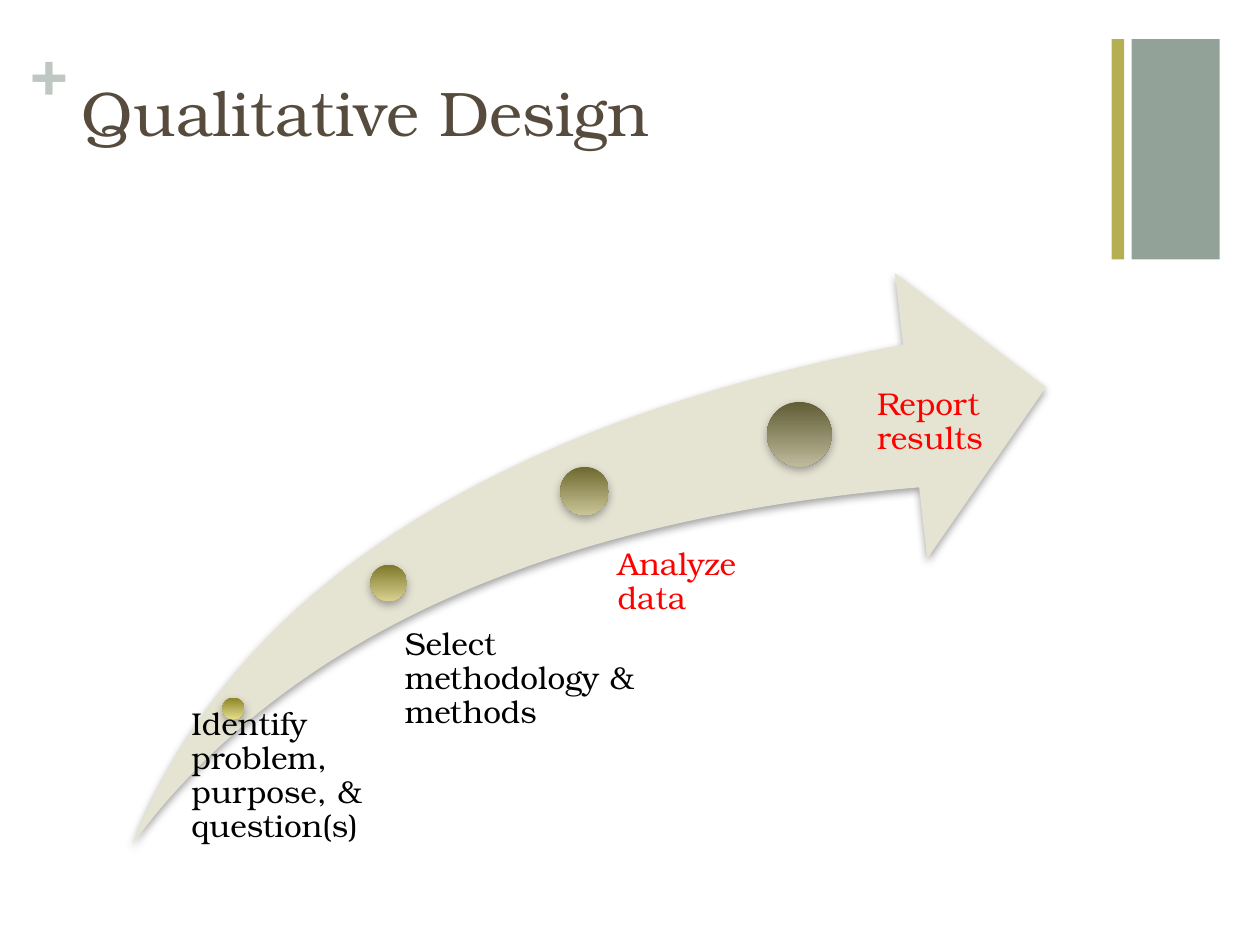
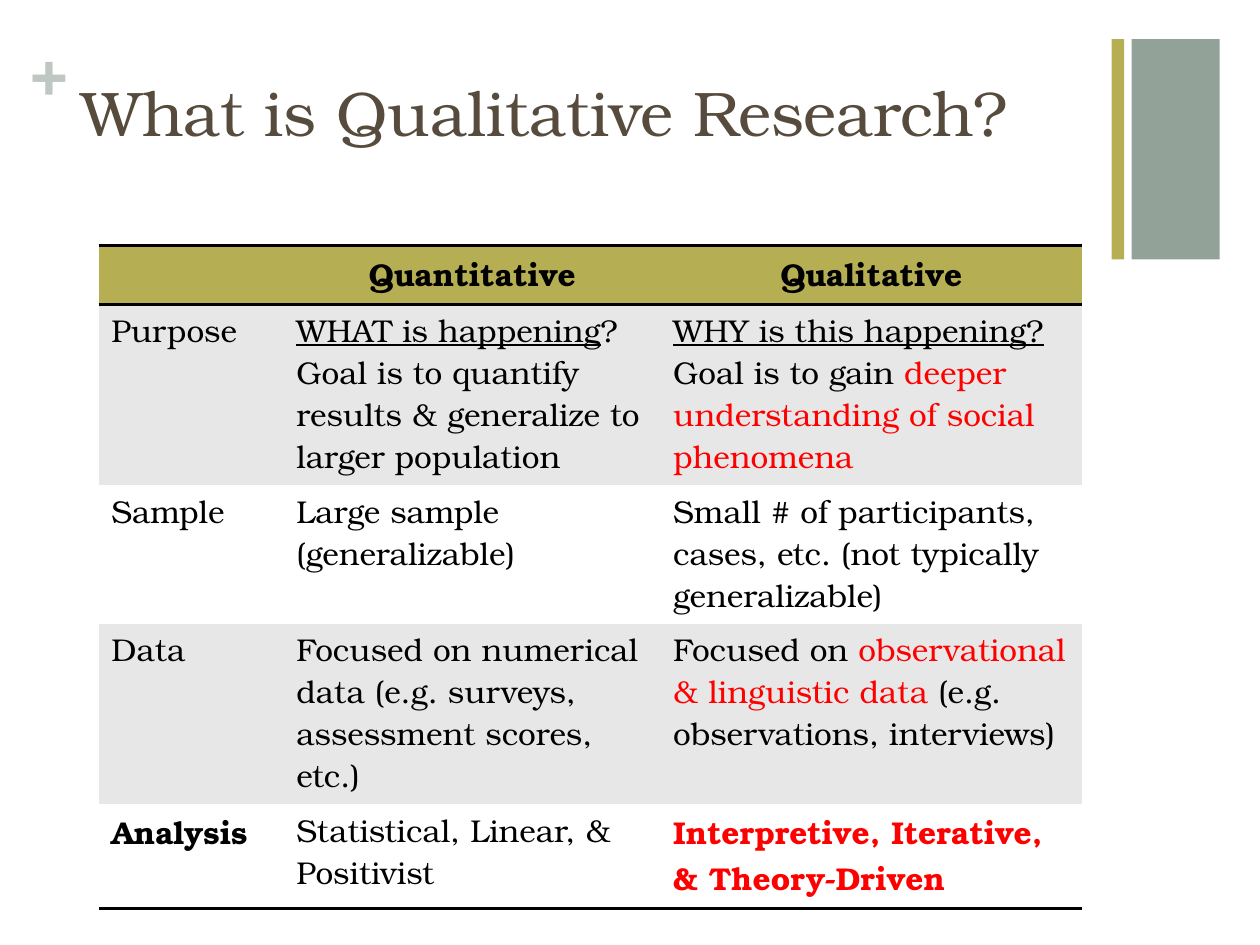
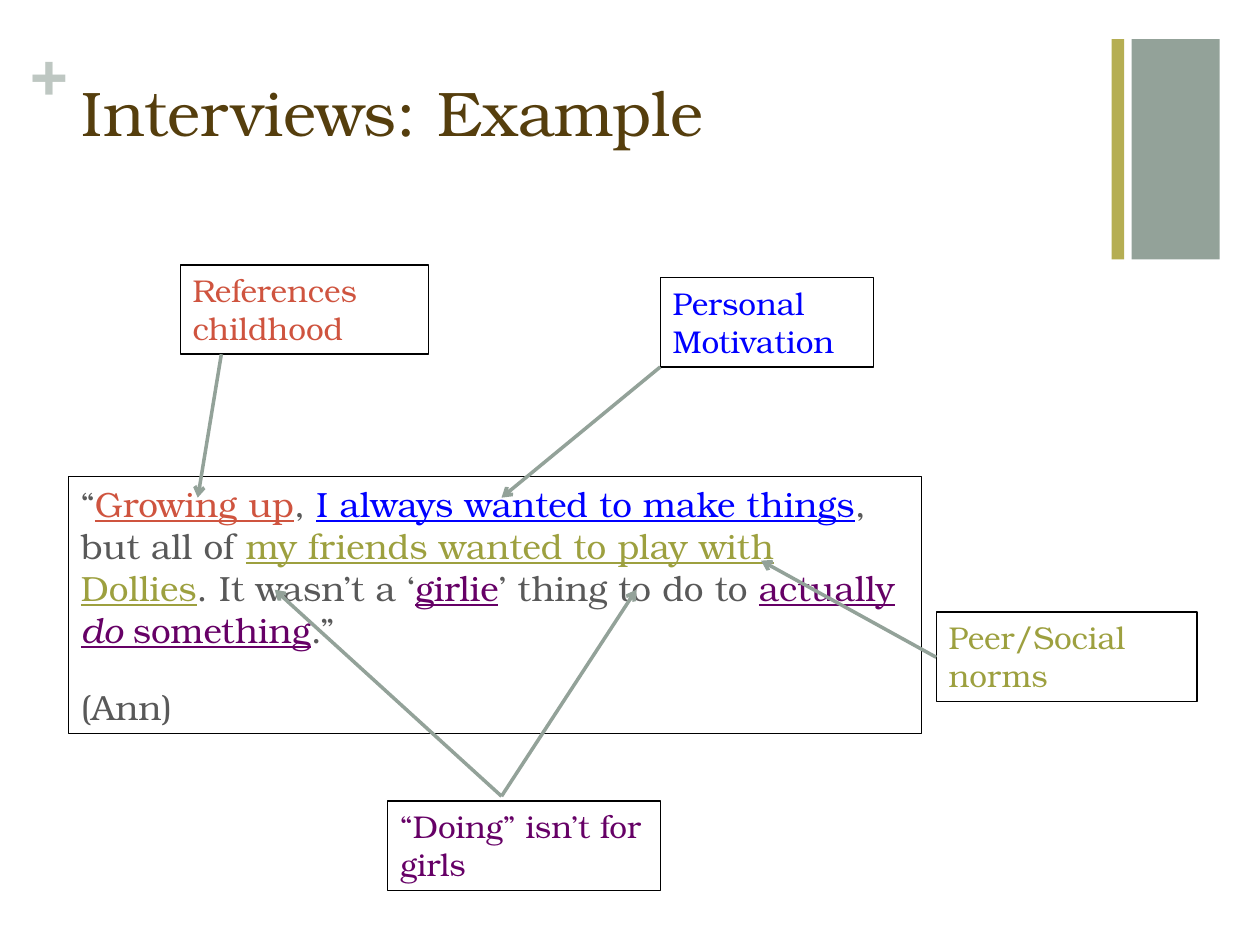
from dataclasses import dataclass
from typing import NamedTuple, Optional

import pptx
import pptx.dml.color
import pptx.enum.shapes
import pptx.enum.text
import pptx.oxml
import pptx.oxml.ns
import pptx.util
from lxml import etree

Pt = pptx.util.Pt
Shapes = pptx.enum.shapes.MSO_SHAPE
Align = pptx.enum.text.PP_ALIGN
qn = pptx.oxml.ns.qn


# Theme
@dataclass(frozen=True)
class Theme:
    font: str = "TeX Gyre Bonum"
    title_size: float = 36
    quote_size: float = 20
    text_size: float = 18
    title: str = "564B3C"
    title_dark: str = "553E0D"
    sage: str = "93A299"
    pale_sage: str = "BEC7C2"
    olive: str = "B5AE53"
    swoosh: str = "E5E3D1"
    black: str = "000000"
    white: str = "FFFFFF"
    grey: str = "595959"
    band: str = "E7E7E7"
    red: str = "FF0000"
    shadow: str = "808080"
    childhood: str = "CF543F"
    motivation: str = "0000FF"
    norms: str = "9DA03F"
    doing: str = "660066"


THEME = Theme()
NO_STYLE_TABLE = "{2D5ABB26-0587-4C30-8999-92F81FD0307C}"


# Building blocks
class Frame(NamedTuple):
    left: float
    top: float
    width: float
    height: float

    def lengths(self) -> list:
        return [Pt(value) for value in self]


class Insets(NamedTuple):
    left: float = 7.2
    top: float = 3.6
    right: float = 7.2
    bottom: float = 3.6


class Span(NamedTuple):
    text: str
    color: Optional[str] = None
    underline: bool = False
    italic: bool = False


@dataclass(frozen=True)
class TextStyle:
    size: float = THEME.text_size
    color: str = THEME.black
    bold: bool = False
    align: Align = Align.LEFT
    line_spacing: object = 1.0
    space_before: float = 0


class Milestone(NamedTuple):
    text: str
    color: str
    dot: Frame
    gradient: tuple
    label: Frame
    inset: float


class Callout(NamedTuple):
    text: str
    color: str
    frame: Frame


class Arrow(NamedTuple):
    start: tuple
    end: tuple


class Row(NamedTuple):
    height: float
    fill: str
    cells: tuple
    bold_columns: tuple = ()
    align: Align = Align.LEFT
    rule_above: bool = False
    rule_below: bool = False


def rgb(color: str) -> pptx.dml.color.RGBColor:
    return pptx.dml.color.RGBColor.from_string(color)


def write_text(frame, paras: list, style: TextStyle) -> None:
    """Write paragraphs, each a list of spans, into a text frame."""
    frame.word_wrap = True
    for index, spans in enumerate(paras):
        para = frame.add_paragraph() if index else frame.paragraphs[0]
        para.alignment = style.align
        para.line_spacing = style.line_spacing
        para.space_before = Pt(style.space_before)
        para.font.name = THEME.font
        para.font.size = Pt(style.size)
        para.font.bold = style.bold
        para.font.color.rgb = rgb(style.color)
        for span in spans:
            run = para.add_run()
            run.text = span.text
            if span.color:
                run.font.color.rgb = rgb(span.color)
            if span.underline:
                run.font.underline = True
            if span.italic:
                run.font.italic = True


def set_insets(target, insets: Insets) -> None:
    target.margin_left, target.margin_top = Pt(insets.left), Pt(insets.top)
    target.margin_right, target.margin_bottom = Pt(insets.right), Pt(insets.bottom)


def add_text(page, frame: Frame, paras: list, style: TextStyle,
             insets: Insets = Insets(), outlined: bool = False) -> None:
    box = page.shapes.add_textbox(*frame.lengths())
    set_insets(box.text_frame, insets)
    if outlined:
        box.line.color.rgb = rgb(THEME.black)
        box.line.width = Pt(0.75)
    write_text(box.text_frame, paras, style)


def add_figure(page, kind: Shapes, frame: Frame, color: Optional[str] = None):
    figure = page.shapes.add_shape(kind, *frame.lengths())
    figure.shadow.inherit = False
    figure.line.fill.background()
    if color:
        figure.fill.solid()
        figure.fill.fore_color.rgb = rgb(color)
    return figure


def add_soft_shadow(figure) -> None:
    effects = figure._element.spPr.find(qn("a:effectLst"))
    shadow = etree.SubElement(effects, qn("a:outerShdw"), blurRad=str(Pt(5)),
                              dist=str(Pt(2)), dir="5400000", rotWithShape="0")
    color = etree.SubElement(shadow, qn("a:srgbClr"), val=THEME.shadow)
    etree.SubElement(color, qn("a:alpha"), val="75000")


def add_arrow(page, arrow: Arrow) -> None:
    ends = [Pt(value) for value in arrow.start + arrow.end]
    line = page.shapes.add_connector(pptx.enum.shapes.MSO_CONNECTOR.STRAIGHT, *ends)
    line.line.color.rgb = rgb(THEME.sage)
    line.line.width = Pt(2)
    properties = line._element.spPr
    etree.SubElement(properties.find(qn("a:ln")), qn("a:tailEnd"), type="arrow")
    etree.SubElement(properties, qn("a:effectLst"))


def rule_cell(cell, side: str) -> None:
    """Draw a black rule on one side of a cell, ahead of its fill."""
    properties = cell._tc.get_or_add_tcPr()
    line = etree.Element(qn(f"a:{side}"), w=str(Pt(2)))
    fill = etree.SubElement(line, qn("a:solidFill"))
    etree.SubElement(fill, qn("a:srgbClr"), val=THEME.black)
    properties.insert(len(properties.findall(qn("a:lnT"))), line)


def add_page(deck, title: str, color: str = THEME.title):
    """Add a blank page with the shared bands, plus sign and title."""
    page = deck.slides.add_slide(deck.slide_layouts[6])
    add_figure(page, Shapes.RECTANGLE, Frame(646.6, 22.3, 50.4, 126), THEME.sage)
    add_figure(page, Shapes.RECTANGLE, Frame(635.2, 22.3, 7.2, 126), THEME.olive)
    add_text(page, Frame(17.5, 18, 21, 44), [[Span("+")]],
             TextStyle(THEME.title_size, THEME.pale_sage, bold=True), Insets(0, 0, 0, 0))
    add_text(page, Frame(39.6, 38.2, 594.7, 87.8), [[Span(title)]],
             TextStyle(THEME.title_size, color))
    return page


# Page 1: research steps along a swoosh
MILESTONES = [
    Milestone("Identify problem, purpose, & question(s)", THEME.black,
              Frame(127.1, 398.6, 12.5, 12.5), ("8A8327", "E5DD8C"),
              Frame(102.8, 404.5, 128.9, 77.8), 6.5),
    Milestone("Select methodology & methods", THEME.black,
              Frame(211.7, 322.7, 20.9, 20.9), ("7D772A", "D8D190"),
              Frame(220.5, 358.8, 147.6, 66.2), 10.8),
    Milestone("Analyze data", THEME.red,
              Frame(320.2, 266.8, 27.7, 27.7), ("6E692F", "CAC596"),
              Frame(338.6, 313.2, 109.4, 61.9), 14.4),
    Milestone("Report results", THEME.red,
              Frame(438.3, 229.7, 37, 37), ("605C34", "BEBA9B"),
              Frame(481.7, 221.8, 109.4, 103), 19.5),
]


def build_design(deck) -> None:
    page = add_page(deck, "Qualitative Design")
    swoosh = add_figure(page, Shapes.SWOOSH_ARROW, Frame(75.6, 156.2, 522, 326.2), THEME.swoosh)
    swoosh.adjustments[0] = swoosh.adjustments[1] = 0.25
    add_soft_shadow(swoosh)
    for step in MILESTONES:
        dot = add_figure(page, Shapes.OVAL, step.dot)
        dot.fill.gradient()
        dot.fill.gradient_angle = 270
        for stop, color in zip(dot.fill.gradient_stops, step.gradient):
            stop.color.rgb = rgb(color)
        add_soft_shadow(dot)
        add_text(page, step.label, [[Span(step.text)]],
                 TextStyle(color=step.color, line_spacing=0.9), Insets(step.inset, 0, 0, 0))


# Page 2: comparison table
COLUMN_WIDTHS = (105.8, 215.3, 240.8)
CELL_INSETS = Insets(top=2.6, bottom=4.6)
COMPARISON = [
    Row(33.5, THEME.olive,
        ([[]], [[Span("Quantitative")]], [[Span("Qualitative")]]),
        bold_columns=(0, 1, 2), align=Align.CENTER, rule_above=True, rule_below=True),
    Row(103.2, THEME.band,
        ([[Span("Purpose")]],
         [[Span("WHAT is happening", underline=True), Span("?")],
          [Span("Goal is to quantify results & generalize to larger population")]],
         [[Span("WHY is this happening?", underline=True)],
          [Span("Goal is to gain "),
           Span("deeper understanding of social phenomena", THEME.red)]])),
    Row(79.2, THEME.white,
        ([[Span("Sample")]],
         [[Span("Large sample (generalizable)")]],
         [[Span("Small # of participants, cases, etc. (not typically generalizable)")]])),
    Row(103.2, THEME.band,
        ([[Span("Data")]],
         [[Span("Focused on numerical data (e.g. surveys, assessment scores, etc.)")]],
         [[Span("Focused on "), Span("observational & linguistic data ", THEME.red),
           Span("(e.g. observations, interviews)")]])),
    Row(59.8, THEME.white,
        ([[Span("Analysis")]],
         [[Span("Statistical, Linear, & Positivist")]],
         [[Span("Interpretive, Iterative, & Theory-Driven", THEME.red)]]),
        bold_columns=(0, 2), rule_below=True),
]


def build_comparison(deck) -> None:
    page = add_page(deck, "What is Qualitative Research?")
    frame = Frame(56.4, 140.4, sum(COLUMN_WIDTHS), sum(row.height for row in COMPARISON))
    table = page.shapes.add_table(len(COMPARISON), len(COLUMN_WIDTHS), *frame.lengths()).table
    table.first_row = table.horz_banding = False
    table._tbl.tblPr.find(qn("a:tableStyleId")).text = NO_STYLE_TABLE
    for column, width in zip(table.columns, COLUMN_WIDTHS):
        column.width = Pt(width)
    for row_index, row in enumerate(COMPARISON):
        table.rows[row_index].height = Pt(row.height)
        for column_index, paras in enumerate(row.cells):
            cell = table.cell(row_index, column_index)
            bold = column_index in row.bold_columns
            set_insets(cell, CELL_INSETS)
            cell.fill.solid()
            cell.fill.fore_color.rgb = rgb(row.fill)
            write_text(cell.text_frame, paras,
                       TextStyle(bold=bold, align=row.align,
                                 line_spacing=Pt(26.2 if bold else 24)))
            if row.rule_above:
                rule_cell(cell, "lnT")
            if row.rule_below:
                rule_cell(cell, "lnB")


# Page 3: coded interview quote
QUOTE = [
    [Span("“"),
     Span("Growing up", THEME.childhood, underline=True),
     Span(", "),
     Span("I always wanted to make things", THEME.motivation, underline=True),
     Span(", but all of "),
     Span("my friends wanted to play with Dollies", THEME.norms, underline=True),
     Span(". It wasn’t a ‘"),
     Span("girlie", THEME.doing, underline=True),
     Span("’ thing to do to "),
     Span("actually ", THEME.doing, underline=True),
     Span("do ", THEME.doing, underline=True, italic=True),
     Span("something", THEME.doing, underline=True),
     Span(".”")],
    [Span("(Ann)")],
]
CALLOUTS = [
    Callout("References childhood", THEME.childhood, Frame(103, 151.4, 141.8, 51)),
    Callout("Peer/Social norms", THEME.norms, Frame(535, 349.8, 149, 51)),
    Callout("“Doing” isn’t for girls", THEME.doing, Frame(221.6, 457.8, 156, 51)),
    Callout("Personal Motivation", THEME.motivation, Frame(377.3, 158.7, 121.7, 51)),
]
DOING_START = (286.6, 455)
ARROWS = [
    Arrow((126.5, 202.4), (113, 284.4)),
    Arrow((535, 375.6), (434.9, 320.4)),
    Arrow((377.3, 209.7), (286.6, 284.4)),
    Arrow(DOING_START, (363.6, 337)),
    Arrow(DOING_START, (157, 337)),
]


def build_interview(deck) -> None:
    page = add_page(deck, "Interviews: Example", THEME.title_dark)
    add_text(page, Frame(39.2, 272.2, 487.4, 146.9), QUOTE,
             TextStyle(THEME.quote_size, THEME.grey, space_before=20), outlined=True)
    for callout in CALLOUTS:
        add_text(page, callout.frame, [[Span(callout.text)]],
                 TextStyle(color=callout.color), outlined=True)
    for arrow in ARROWS:
        add_arrow(page, arrow)


def main() -> None:
    deck = pptx.Presentation()
    deck.slide_width, deck.slide_height = Pt(720), Pt(540)
    build_design(deck)
    build_comparison(deck)
    build_interview(deck)
    deck.save("out.pptx")


if __name__ == "__main__":
    main()
